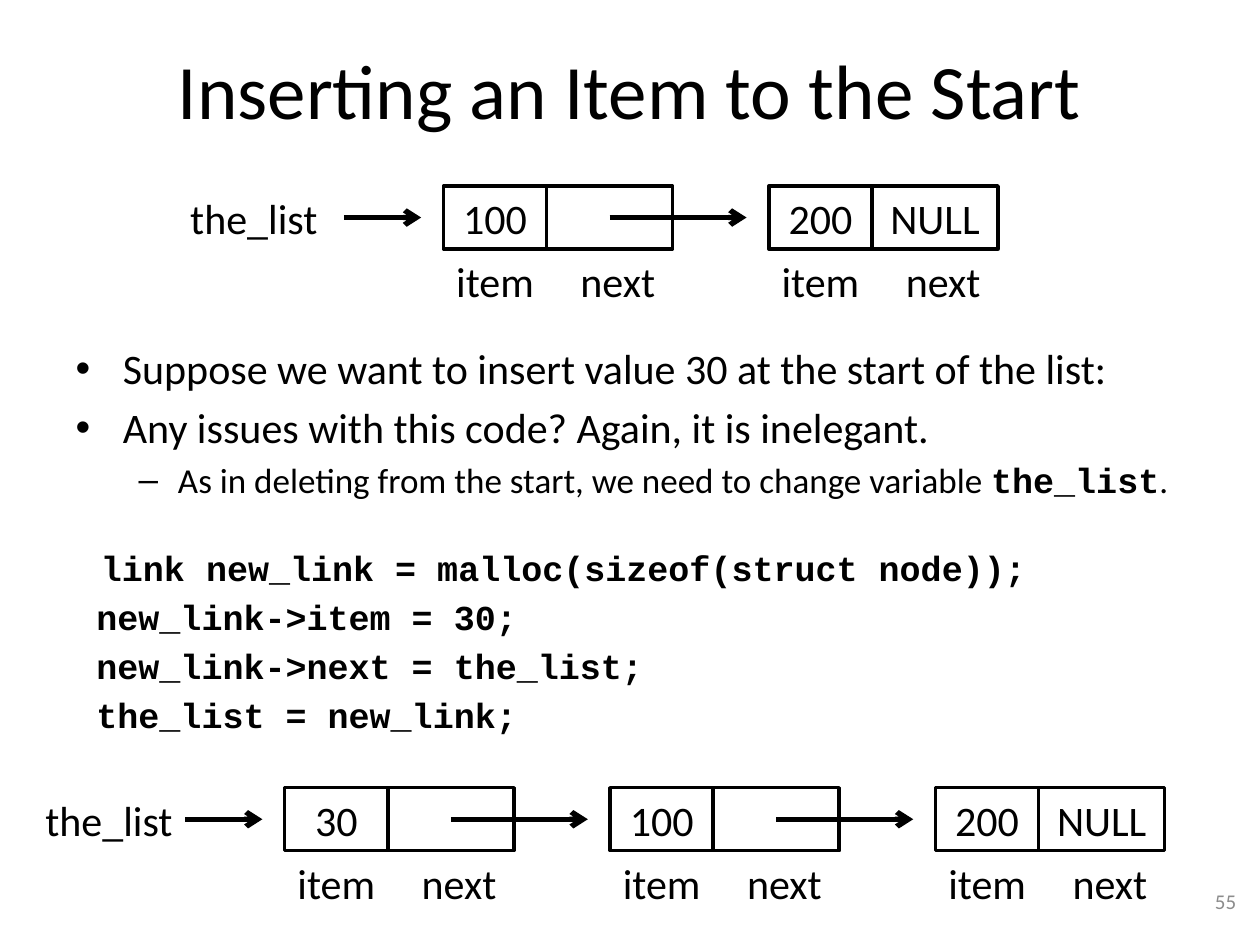
import pptx
import pptx.dml.color
import pptx.enum.shapes
import pptx.enum.text
import pptx.oxml
import pptx.oxml.ns
import pptx.util

Cm = pptx.util.Cm
Pt = pptx.util.Pt
ALIGN = pptx.enum.text.PP_ALIGN
ANCHOR = pptx.enum.text.MSO_ANCHOR
BLACK = pptx.dml.color.RGBColor(0x00, 0x00, 0x00)
GRAY = pptx.dml.color.RGBColor(0x8C, 0x8C, 0x8C)

# Linked-list geometry in centimetres
ITEM_W, NEXT_W, CELL_H = 2.08, 2.54, 1.27
NODE_PITCH = 6.56
ARROW_GAP = 0.45
NAME_W, NAME_ARROW = 3.4, 1.56
NEXT_LABEL_SHIFT, NEXT_LABEL_W = 0.42, 2.03

BULLETS = [
    (0, 24, ["Suppose we want to insert value 30 at the start of the list:"]),
    (0, 24, ["Any issues with this code? Again, it is inelegant."]),
    (1, 20, ["As in deleting from the start, we need to change variable ",
             "the_list", "."]),
]
CODE = [
    "link new_link = malloc(sizeof(struct node));",
    "new_link->item = 30;",
    "new_link->next = the_list;",
    "the_list = new_link;",
]


class ListSlide:
    body_font = "Calibri"
    code_font = "Courier New"

    def __init__(self, deck):
        self.slide = deck.slides.add_slide(deck.slide_layouts[1])

    def style(self, run, size=24, color=BLACK, code=False):
        run.font.name = self.code_font if code else self.body_font
        run.font.size = Pt(size)
        run.font.bold = code
        run.font.color.rgb = color

    def place(self, shape, left, top, width, height):
        shape.left, shape.top = Cm(left), Cm(top)
        shape.width, shape.height = Cm(width), Cm(height)

    def set_text(self, frame, text, align, size=24, color=BLACK):
        frame.text = text
        frame.paragraphs[0].alignment = align
        for run in frame.paragraphs[0].runs:
            self.style(run, size, color)

    def title(self, text):
        heading = self.slide.shapes.title
        self.place(heading, 1.27, 0.2, 22.86, 3.18)
        self.set_text(heading.text_frame, text, ALIGN.CENTER, 44)

    def body(self, bullets, code_lines):
        body = self.slide.placeholders[1]
        self.place(body, 1.27, 6.78, 22.86, 10.59)
        frame = body.text_frame
        frame.auto_size = pptx.enum.text.MSO_AUTO_SIZE.NONE
        frame.text = "\n".join(["".join(parts) for _, _, parts in bullets]
                               + code_lines)
        paragraphs = frame.paragraphs
        for paragraph, (level, size, parts) in zip(paragraphs, bullets):
            paragraph.level = level
            paragraph.text = parts[0]
            for part in parts[1:]:
                paragraph.add_run().text = part
            for number, run in enumerate(paragraph.runs):
                self.style(run, size, code=number % 2 == 1)
        code = paragraphs[len(bullets):]
        for number, paragraph in enumerate(code):
            self.unbullet(paragraph, 0.42 if number else 0.51)
            self.style(paragraph.runs[0], 20, code=True)
        code[0].space_before = Pt(26)

    def unbullet(self, paragraph, margin):
        properties = paragraph._p.get_or_add_pPr()
        properties.set("marL", str(Cm(margin)))
        properties.set("indent", "0")
        properties.append(pptx.oxml.parse_xml(
            "<a:buNone %s/>" % pptx.oxml.ns.nsdecls("a")))

    def label(self, text, left, top, width, height=CELL_H,
              align=ALIGN.CENTER, size=24, color=BLACK):
        box = self.slide.shapes.add_textbox(
            Cm(left), Cm(top), Cm(width), Cm(height))
        frame = box.text_frame
        frame.word_wrap = True
        frame.vertical_anchor = ANCHOR.MIDDLE
        margin = 0 if align == ALIGN.CENTER else Cm(0.25)
        frame.margin_left = frame.margin_right = margin
        self.set_text(frame, text, align, size, color)

    def cell(self, text, left, top, width):
        box = self.slide.shapes.add_shape(
            pptx.enum.shapes.MSO_SHAPE.RECTANGLE,
            Cm(left), Cm(top), Cm(width), Cm(CELL_H))
        box.shadow.inherit = False
        box.fill.background()
        box.line.color.rgb = BLACK
        box.line.width = Pt(2)
        if text:
            frame = box.text_frame
            frame.margin_left = frame.margin_right = 0
            frame.vertical_anchor = ANCHOR.MIDDLE
            self.set_text(frame, text, ALIGN.CENTER)

    def arrow(self, start, end, y):
        connector = self.slide.shapes.add_connector(
            pptx.enum.shapes.MSO_CONNECTOR.STRAIGHT,
            Cm(start), Cm(y), Cm(end), Cm(y))
        connector.line.color.rgb = BLACK
        connector.line.width = Pt(3)
        namespace = pptx.oxml.ns.nsdecls("a")
        properties = connector._element.spPr
        properties.get_or_add_ln().append(
            pptx.oxml.parse_xml('<a:tailEnd %s type="arrow"/>' % namespace))
        properties.append(
            pptx.oxml.parse_xml("<a:effectLst %s/>" % namespace))

    def node(self, value, pointer, left, top):
        next_left = left + ITEM_W
        self.cell(value, left, top, ITEM_W)
        self.cell(pointer, next_left, top, NEXT_W)
        self.label("item", left, top + CELL_H, ITEM_W)
        self.label("next", next_left + NEXT_LABEL_SHIFT, top + CELL_H,
                   NEXT_LABEL_W)

    def linked_list(self, values, left, top, name_gap):
        """Draw the_list and its nodes; left is that of the first node."""
        middle = top + CELL_H / 2
        self.label("the_list", left - name_gap - NAME_W, top, NAME_W,
                   align=ALIGN.RIGHT)
        self.arrow(left - ARROW_GAP - NAME_ARROW, left - ARROW_GAP, middle)
        for number, value in enumerate(values):
            node_left = left + number * NODE_PITCH
            last = number == len(values) - 1
            self.node(value, "NULL" if last else "", node_left, top)
            if not last:
                self.arrow(node_left + ITEM_W + NEXT_W / 2,
                           node_left + NODE_PITCH - ARROW_GAP, middle)


def main():
    deck = pptx.Presentation()
    deck.slide_width, deck.slide_height = Cm(25.4), Cm(19.05)
    page = ListSlide(deck)
    page.title("Inserting an Item to the Start")
    page.body(BULLETS, CODE)
    page.linked_list(["100", "200"], left=8.94, top=3.75, name_gap=2.29)
    page.linked_list(["30", "100", "200"], left=5.74, top=15.88,
                     name_gap=2.01)
    page.label("55", 19.25, 17.65, 5.92, 1.02, ALIGN.RIGHT, 12, GRAY)
    deck.save("out.pptx")


if __name__ == "__main__":
    main()
